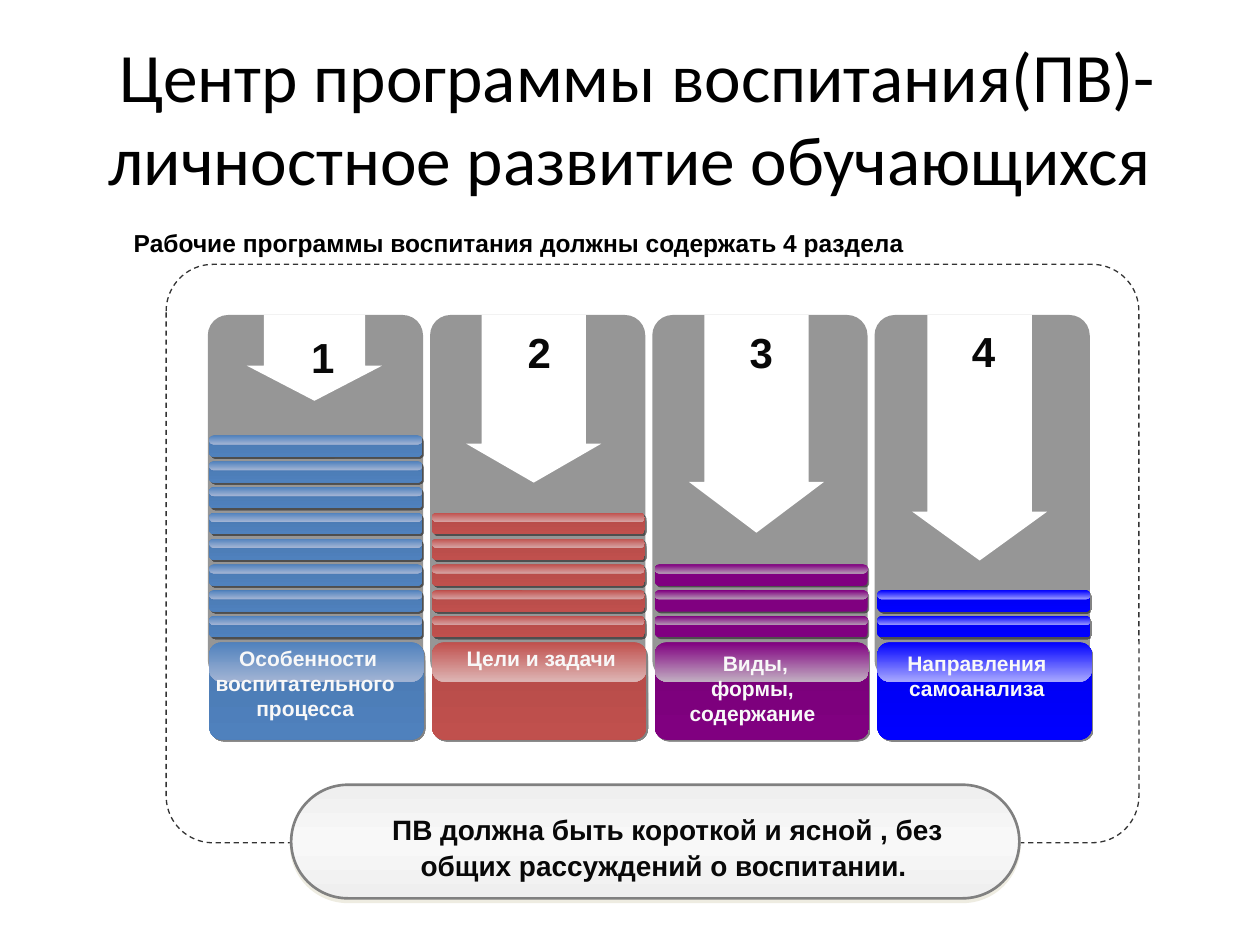
from dataclasses import dataclass
from copy import deepcopy
from lxml import etree
from pptx import Presentation
from pptx import util as u
from pptx.dml.color import RGBColor
from pptx.enum import dml, shapes, text
from pptx.oxml import ns


@dataclass(frozen=True)
class Theme:
    """Colours, fonts and type sizes of the slide."""
    white: str = "FFFFFF"
    black: str = "000000"
    ink: str = "080808"
    label: str = "F8F8F8"
    panel: str = "969696"
    dash: str = "333333"
    border: str = "808080"
    pill: tuple = ("EFEFEF", "F8F8F8", "EFEFEF")
    pill_shadow: str = "EEECE1"
    title_font: str = "Calibri"
    font: str = "Arial"
    title_size: float = 39.6
    number_size: int = 24
    note_size: int = 16
    heading_size: int = 14
    label_size: int = 12


@dataclass(frozen=True)
class Section:
    """One column: its label, bars, arrow and colours."""
    label: str
    label_box: tuple
    bars: int
    arrow_left: float
    arrow_height: float
    arrow_adjust: tuple
    number: str
    number_top: float
    base: str
    dark: str
    bar_dark: str
    cap_light: str
    bar_light: str


SECTIONS = (
    Section(" Особенности воспитательного процесса", (3.96, 12.88, 4.39, 1.88), 8,
            4.98, 1.73, (0.751, 0.408), " 1", 6.55,
            "4F81BD", "4A79B1", "4A79B1", "A2B4D4", "A2B4D4"),
    Section(" Цели и задачи", (8.86, 12.88, 3.99, 0.76), 5,
            9.4, 3.38, (0.773, 0.288), "2", 6.45,
            "C0504D", "B44B48", "B44B48", "DDB4B3", "D6A2A2"),
    Section(" Виды, формы, содержание", (13.34, 12.98, 3.66, 1.8), 3,
            13.89, 4.39, (0.773, 0.376), "3", 6.45,
            "800080", "780078", "800080", "C1ADC1", "B498B4"),
    Section("Направления самоанализа", (17.6, 12.98, 4.19, 1.27), 2,
            18.39, 4.95, (0.773, 0.362), "4", 6.43,
            "0000FF", "0000EF", "0000EF", "A7A7FF", "9898FF"),
)


class SlideBuilder:
    """Draws styled elements on the current slide."""

    def __init__(self, slide, theme):
        self.slide = slide
        self.theme = theme

    def add_shadow(self, effects, color, alpha, distance, angle):
        """Append an outer shadow to an effect list."""
        shadow = etree.SubElement(effects, ns.qn("a:outerShdw"), dist=str(u.Pt(distance)),
                                  dir=str(angle * 60000), algn="ctr", rotWithShape="0")
        tint = etree.SubElement(shadow, ns.qn("a:srgbClr"), val=color)
        etree.SubElement(tint, ns.qn("a:alpha"), val=str(alpha * 1000))

    def fill_gradient(self, shape, colors):
        """Fill a shape from top to bottom with evenly spaced colours."""
        shape.fill.gradient()
        shape.fill.gradient_angle = 270
        stops = shape.element.spPr.find(ns.qn("a:gradFill")).find(ns.qn("a:gsLst"))
        for _ in colors[2:]:
            stops.append(deepcopy(stops[-1]))
        for index, (stop, color) in enumerate(zip(shape.fill.gradient_stops, colors)):
            stop.position = index / (len(colors) - 1)
            stop.color.rgb = RGBColor.from_string(color)

    def shape(self, kind, box, fill, adjust, shadow=None, line=None):
        """Add a preset shape with a solid or gradient fill."""
        shape = self.slide.shapes.add_shape(kind, *map(u.Cm, box))
        for index, value in enumerate(adjust):
            shape.adjustments[index] = value
        if isinstance(fill, tuple):
            self.fill_gradient(shape, fill)
        else:
            shape.fill.solid()
            shape.fill.fore_color.rgb = RGBColor.from_string(fill)
        if line:
            color, width, dash = line
            shape.line.color.rgb = RGBColor.from_string(color)
            for name, value in {"width": u.Pt(width), "dash_style": dash}.items():
                setattr(shape.line, name, value)
        else:
            shape.line.fill.background()
        shape.shadow.inherit = False
        if shadow:
            self.add_shadow(shape.element.spPr.find(ns.qn("a:effectLst")), *shadow)

    def round_box(self, box, fill, radius, **options):
        """Add a rounded rectangle."""
        self.shape(shapes.MSO_SHAPE.ROUNDED_RECTANGLE, box, fill, (radius,), **options)

    def arrow(self, box, adjust):
        """Add a white down arrow."""
        self.shape(shapes.MSO_SHAPE.DOWN_ARROW, box, self.theme.white, adjust)

    def glossy(self, box, gloss_height, radii, body, gloss):
        """Add a rounded body with a lighter strip along its top."""
        self.round_box(box, body, radii[0], shadow=(self.theme.ink, 50, 1.4, 45))
        self.round_box((*box[:3], gloss_height), gloss, radii[1])

    def format_paragraph(self, paragraph, font, size, color, bold, **layout):
        """Apply font and paragraph values."""
        for name, value in {"name": font, "size": u.Pt(size), "bold": bold}.items():
            setattr(paragraph.runs[0].font, name, value)
            setattr(paragraph.font, name, value)
        for run in paragraph.runs:
            for name, value in {"name": font, "size": u.Pt(size), "bold": bold}.items():
                setattr(run.font, name, value)
            run.font.color.rgb = RGBColor.from_string(color)
        for name, value in layout.items():
            setattr(paragraph, name, value)

    def title(self, words, box):
        """Place and format the title placeholder."""
        shape = self.slide.shapes.title
        for name, value in zip(("left", "top", "width", "height"), box):
            setattr(shape, name, u.Cm(value))
        shape.text_frame.text = words
        shape.text_frame.vertical_anchor = text.MSO_ANCHOR.MIDDLE
        self.format_paragraph(shape.text_frame.paragraphs[0], self.theme.title_font,
                              self.theme.title_size, self.theme.black, False,
                              alignment=text.PP_ALIGN.CENTER)

    def text(self, words, box, size, color, shadow=False,
             alignment=text.PP_ALIGN.CENTER, line_spacing=None):
        """Add a bold wrapped text box."""
        frame = self.slide.shapes.add_textbox(*map(u.Cm, box)).text_frame
        frame.text = words
        frame.word_wrap = True
        frame.auto_size = text.MSO_AUTO_SIZE.SHAPE_TO_FIT_TEXT
        paragraph = frame.paragraphs[0]
        self.format_paragraph(paragraph, self.theme.font, size, color, True,
                              alignment=alignment, line_spacing=line_spacing)
        if shadow:
            effects = etree.Element(ns.qn("a:effectLst"))
            self.add_shadow(effects, self.theme.black, 100, 1.4, 45)
            fill = paragraph.runs[0].font.fill
            fill.solid()
            fill.fore_color.rgb = RGBColor.from_string(color)
            properties = paragraph.runs[0]._r.get_or_add_rPr()
            properties.find(ns.qn("a:solidFill")).addnext(effects)

    def section(self, index, section):
        """Draw one column with arrow, number, label and stacked bars."""
        theme = self.theme
        self.round_box((4.19 + 4.48 * index, 6.35, 4.34, 7.37), theme.panel, 0.095)
        self.arrow((section.arrow_left, 6.35, 2.72, section.arrow_height), section.arrow_adjust)
        self.text(section.number, (4.88 + 4.48 * index, section.number_top, 3.02, 1.27),
                  theme.number_size, theme.ink)
        left = 4.22 + 4.49 * index
        self.glossy((left, 12.95, 4.32, 1.96), 0.79, (0.127, 0.308),
                    (section.dark, section.base), (section.base, section.cap_light))
        self.text(section.label, section.label_box, theme.label_size, theme.label, shadow=True)
        for level in range(section.bars):
            self.glossy((left, 12.42 - 0.52 * level, 4.29, 0.43), 0.18, (0.206, 0.5),
                        (section.bar_dark, section.base), (section.base, section.bar_light))


def main():
    """Build and save the slide."""
    presentation = Presentation()
    presentation.slide_width, presentation.slide_height = u.Cm(25.4), u.Cm(19.05)
    theme = Theme()
    builder = SlideBuilder(presentation.slides.add_slide(presentation.slide_layouts[5]), theme)
    builder.title(" Центр программы воспитания(ПВ)-\vличностное развитие обучающихся",
                  (1.27, 0.76, 22.86, 3.18))
    builder.text(" Рабочие программы воспитания должны содержать 4 раздела",
                 (2.31, 4.42, 22.2, 0.91), theme.heading_size, theme.black,
                 alignment=text.PP_ALIGN.LEFT, line_spacing=1.1)
    builder.round_box((3.35, 5.33, 19.61, 11.66), theme.white, 0.081,
                      line=(theme.dash, 0.75, dml.MSO_LINE.DASH))
    builder.round_box((5.87, 15.82, 14.68, 2.29), theme.pill, 0.5,
                      shadow=(theme.pill_shadow, 100, 2, 90),
                      line=(theme.border, 1.5, dml.MSO_LINE.SOLID))
    builder.text(" ПВ должна быть короткой и ясной , без общих рассуждений о воспитании.",
                 (6.88, 16.18, 13, 1.75), theme.note_size, theme.ink, line_spacing=1.1)
    for index, section in enumerate(SECTIONS):
        builder.section(index, section)
    presentation.save("out.pptx")


if __name__ == "__main__":
    main()
